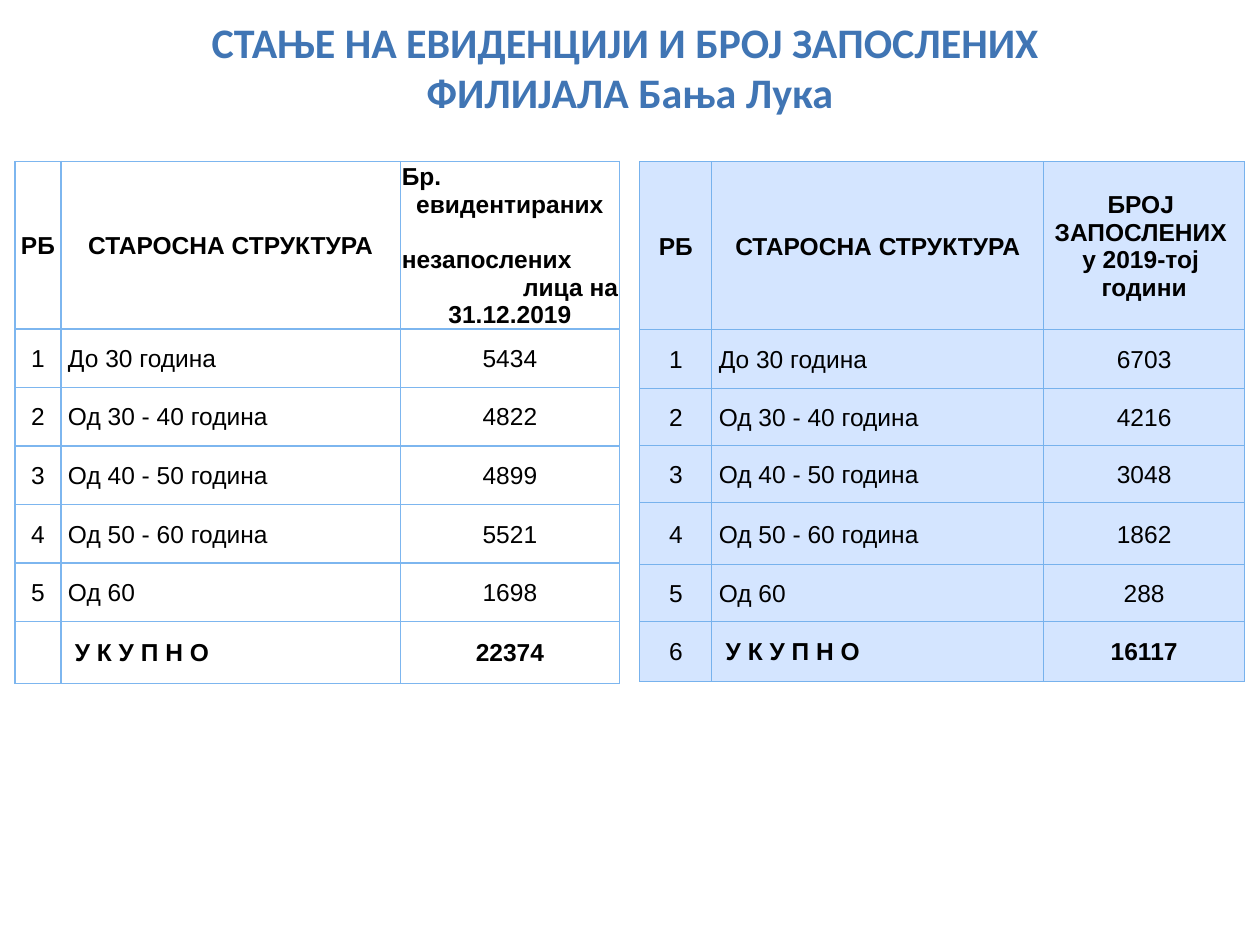
"""Build a slide with two tables by age group: registered unemployed and employed."""
from dataclasses import dataclass

from lxml.etree import SubElement
from pptx import Presentation
from pptx.dml.color import RGBColor
from pptx.enum.text import MSO_VERTICAL_ANCHOR as Anchor, PP_PARAGRAPH_ALIGNMENT as Align
from pptx.oxml.ns import qn
from pptx.slide import Slide
from pptx.table import _Cell as Cell
from pptx.util import Cm, Pt

TITLE_BLUE = RGBColor(0x40, 0x75, 0xB4)
LEFT_BORDER = RGBColor(0x7D, 0xB6, 0xEF)
RIGHT_BORDER = RGBColor(0x77, 0xB2, 0xED)
LIGHT_BLUE = RGBColor(0xD4, 0xE5, 0xFF)
WHITE = RGBColor(0xFF, 0xFF, 0xFF)
BLACK = RGBColor(0, 0, 0)

TITLE = "СТАЊЕ НА ЕВИДЕНЦИЈИ И БРОЈ ЗАПОСЛЕНИХ \vФИЛИЈАЛА Бања Лука"
AGE_GROUPS = ["До 30 година", "Од 30 - 40 година", "Од 40 - 50 година",
              "Од 50 - 60 година", "Од 60", "У К У П Н О"]
TABLE_TOP = 3.26
SPACE_WIDTH = 0.14


@dataclass(frozen=True)
class Line:
    text: str
    alignment: Align = Align.CENTER
    space_before: float = 0


@dataclass(frozen=True)
class AgeTable:
    left: float
    columns: list[float]
    rows: list[float]
    border: RGBColor
    border_width: float
    fill: RGBColor
    count_header: list[Line]
    numbers: list[str]
    counts: list[int]


TABLES = [
    AgeTable(
        0.3, [0.93, 6.84, 4.42], [3.37] + [1.18] * 5 + [1.25],
        LEFT_BORDER, 1, WHITE,
        [Line("Бр.", Align.LEFT), Line("евидентираних"),
         Line("незапослених", Align.LEFT, 16), Line("лица на", Align.RIGHT),
         Line("31.12.2019")],
        ["1", "2", "3", "4", "5", ""], [5434, 4822, 4899, 5521, 1698, 22374]),
    AgeTable(
        12.9, [1.45, 6.69, 4.05], [3.39, 1.19, 1.15, 1.15, 1.25, 1.15, 1.2],
        RIGHT_BORDER, 0.75, LIGHT_BLUE,
        [Line("БРОЈ "), Line("ЗАПОСЛЕНИХ "), Line("у 2019-тој "), Line("години")],
        ["1", "2", "3", "4", "5", "6"], [6703, 4216, 3048, 1862, 288, 16117]),
]


def apply_format(target: object, values: dict[str, object]) -> None:
    """Set every attribute named in values on target."""
    for name, value in values.items():
        setattr(target, name, value)


def add_borders(cell: Cell, color: RGBColor, width: float) -> None:
    """Draw a solid line on all four sides of a cell."""
    properties = cell._tc.get_or_add_tcPr()
    for side in ("a:lnL", "a:lnR", "a:lnT", "a:lnB"):
        line = SubElement(properties, qn(side), w=str(Pt(width)))
        fill = SubElement(line, qn("a:solidFill"))
        SubElement(fill, qn("a:srgbClr"), val=str(color))


def write_cell(cell: Cell, lines: list[Line], bold: bool, indent: float) -> None:
    """Write lines as paragraphs in a cell."""
    apply_format(cell, {
        "vertical_anchor": Anchor.MIDDLE, "margin_left": Cm(indent),
        "margin_right": Cm(0.03), "margin_top": Cm(0.03), "margin_bottom": 0})
    cell.text = "\n".join(line.text for line in lines)
    for paragraph, line in zip(cell.text_frame.paragraphs, lines):
        apply_format(paragraph, {
            "alignment": line.alignment, "space_before": Pt(line.space_before)})
        apply_format(paragraph.font, {"name": "Arial", "size": Pt(14), "bold": bold})
        paragraph.font.color.rgb = BLACK


def add_age_table(slide: Slide, data: AgeTable) -> None:
    """Add one table with its header, age groups and total."""
    shape = slide.shapes.add_table(
        len(data.rows), len(data.columns), Cm(data.left), Cm(TABLE_TOP),
        Cm(sum(data.columns)), Cm(sum(data.rows)))
    table = shape.table
    apply_format(table, {"first_row": False, "horz_banding": False})
    for column, width in zip(table.columns, data.columns):
        column.width = Cm(width)
    for row, height in zip(table.rows, data.rows):
        row.height = Cm(height)

    content = [[[Line("РБ")], [Line("СТАРОСНА СТРУКТУРА")], data.count_header]]
    for number, group, count in zip(data.numbers, AGE_GROUPS, data.counts):
        content.append([[Line(number)], [Line(group, Align.LEFT)], [Line(str(count))]])

    last = len(content) - 1
    for row_index, row_lines in enumerate(content):
        for column_index, lines in enumerate(row_lines):
            cell = table.cell(row_index, column_index)
            bold = row_index == 0 or (row_index == last and column_index > 0)
            indent = 0.03
            if row_index > 0 and column_index == 1:
                indent = SPACE_WIDTH * (2 if row_index == last else 1)
            write_cell(cell, lines, bold, indent)
            add_borders(cell, data.border, data.border_width)
            cell.fill.solid()
            cell.fill.fore_color.rgb = data.fill


def add_title(slide: Slide) -> None:
    """Place and format the title."""
    title = slide.shapes.title
    apply_format(title, {"left": Cm(1.27), "top": Cm(0.53),
                         "width": Cm(22.86), "height": Cm(1.63)})
    title.text_frame.text = TITLE
    apply_format(title.text_frame, {"vertical_anchor": Anchor.MIDDLE, "word_wrap": True})
    paragraph = title.text_frame.paragraphs[0]
    paragraph.alignment = Align.CENTER
    for run in paragraph.runs:
        apply_format(run.font, {"name": "Calibri", "size": Pt(24), "bold": True})
        run.font.color.rgb = TITLE_BLUE


def main() -> None:
    """Create and save the presentation."""
    presentation = Presentation()
    apply_format(presentation, {"slide_width": Cm(25.4), "slide_height": Cm(19.05)})
    slide = presentation.slides.add_slide(presentation.slide_layouts[5])
    add_title(slide)
    for data in TABLES:
        add_age_table(slide, data)
    presentation.save("out.pptx")


if __name__ == "__main__":
    main()
